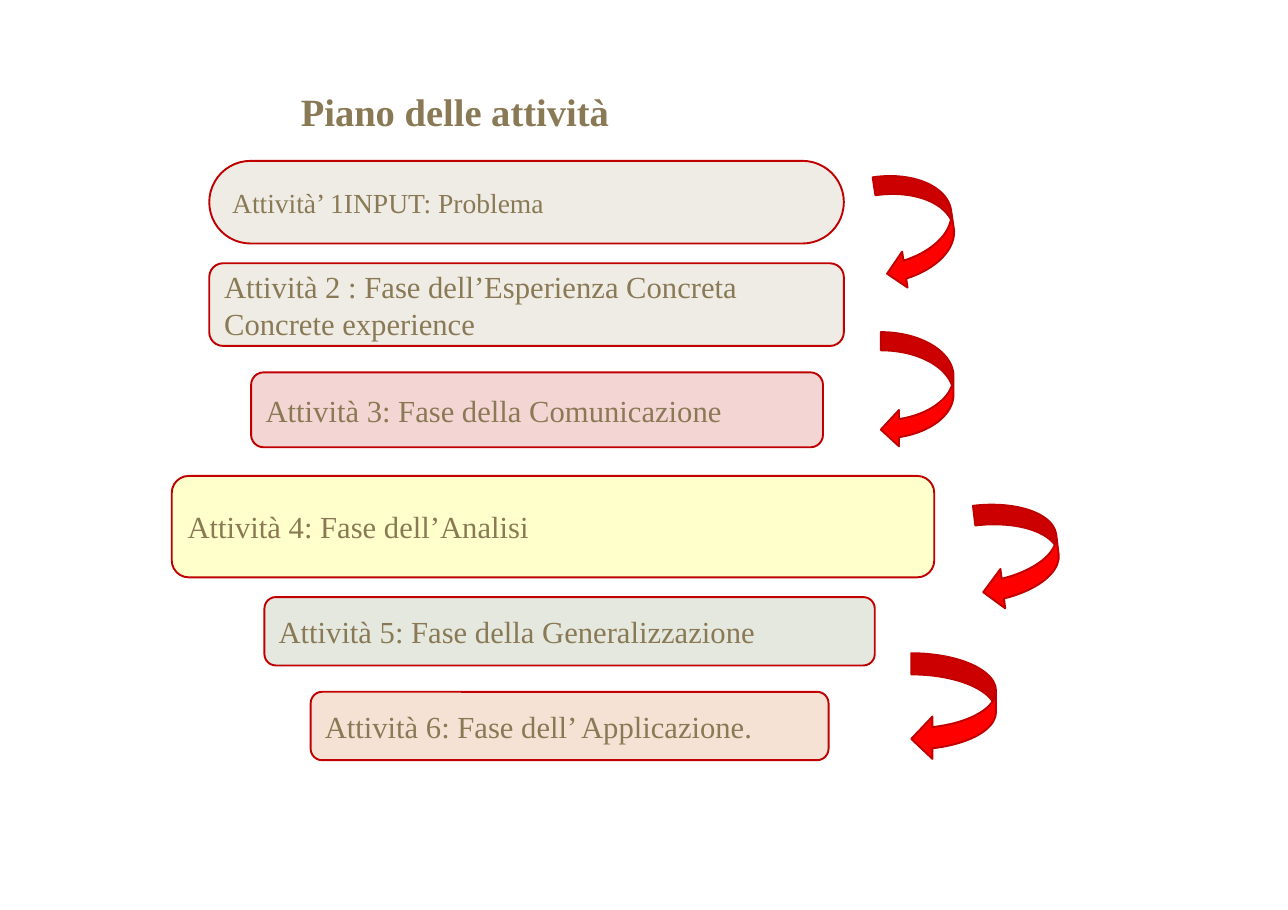
from pptx import Presentation
from pptx.dml.color import RGBColor
from pptx.enum.shapes import MSO_SHAPE
from pptx.enum.text import MSO_ANCHOR, PP_ALIGN
from pptx.util import Inches, Pt

ROUND = MSO_SHAPE.ROUNDED_RECTANGLE
CURVE = MSO_SHAPE.CURVED_DOWN_ARROW
LEFT, CENTER = PP_ALIGN.LEFT, PP_ALIGN.CENTER
MIDDLE = MSO_ANCHOR.MIDDLE


def color(code):
    return RGBColor.from_string(code)


class Board:
    """Style and current slide; lengths are percent of the slide's size."""
    font, ink, edge, red = "Times New Roman", "8A7955", "C00000", "FF0000"

    def __init__(self, deck):
        self.wide, self.high = deck.slide_width, deck.slide_height
        self.slide = deck.slides.add_slide(deck.slide_layouts[5])

    def area(self, x, y, w, h):
        return (round(x * self.wide / 100), round(y * self.high / 100),
                round(w * self.wide / 100), round(h * self.high / 100))

    def label(self, shape, text, size, align, bold=False):
        frame = shape.text_frame
        frame.word_wrap = True
        frame.vertical_anchor = MIDDLE
        frame.text = text
        for para in frame.paragraphs:
            para.alignment = align
            for run in para.runs:
                run.font.name = self.font
                run.font.size = Pt(size)
                run.font.bold = bold
                run.font.color.rgb = color(self.ink)

    def title(self, text, box):
        shape = self.slide.shapes.title
        shape.left, shape.top, shape.width, shape.height = self.area(*box)
        self.label(shape, text, 25.2, CENTER, True)

    def shape(self, kind, box, fill):
        shape = self.slide.shapes.add_shape(kind, *self.area(*box))
        shape.shadow.inherit = False
        shape.fill.solid()
        shape.fill.fore_color.rgb = color(fill)
        shape.line.color.rgb = color(self.edge)
        shape.line.width = Pt(1.25)
        return shape

    def step(self, text, box, fill, size=20, bend=None):
        shape = self.shape(ROUND, box, fill)
        if bend is not None:
            shape.adjustments[0] = bend
        self.label(shape, text, size, LEFT)

    def arrow(self, box, turn):
        self.shape(CURVE, box, self.red).rotation = turn


def main():
    deck = Presentation()
    deck.slide_width, deck.slide_height = Inches(11.69), Inches(8.26)
    board = Board(deck)
    board.title("Piano delle attività", (0, 9.32, 70.66, 5.69))

    # Activities, top to bottom
    board.step("Attività’ 1INPUT: Problema",
               (16.25, 17.68, 49.27, 9.08), "EFECE5", 18, 0.5)
    steps = [
        ("Attività 2 : Fase dell’Esperienza Concreta\nConcrete experience",
         (16.25, 28.93, 49.27, 9.08), "EFECE5"),
        ("Attività 3: Fase della Comunicazione",
         (19.5, 40.92, 44.4, 8.23), "F3D5D3"),
        ("Attività 4: Fase dell’Analisi",
         (13.34, 52.3, 59.2, 11.14), "FFFFCC"),
        ("Attività 5: Fase della Generalizzazione",
         (20.53, 65.62, 47.39, 7.51), "E5E8DF"),
        ("Attività 6: Fase dell’ Applicazione.",
         (24.12, 76.03, 40.21, 7.51), "F6E2D4"),
    ]
    for text, box, fill in steps:
        board.step(text, box, fill)

    # Curved arrows from one activity to the next
    arrows = [
        ((66.72, 21.19, 8.98, 7.99), 81.5),
        ((66.72, 38.86, 8.98, 7.99), 90),
        ((74.94, 56.54, 8.3, 8.72), 83.2),
        ((69.89, 73, 8.3, 9.32), 90),
    ]
    for box, turn in arrows:
        board.arrow(box, turn)

    deck.save("out.pptx")


if __name__ == "__main__":
    main()
